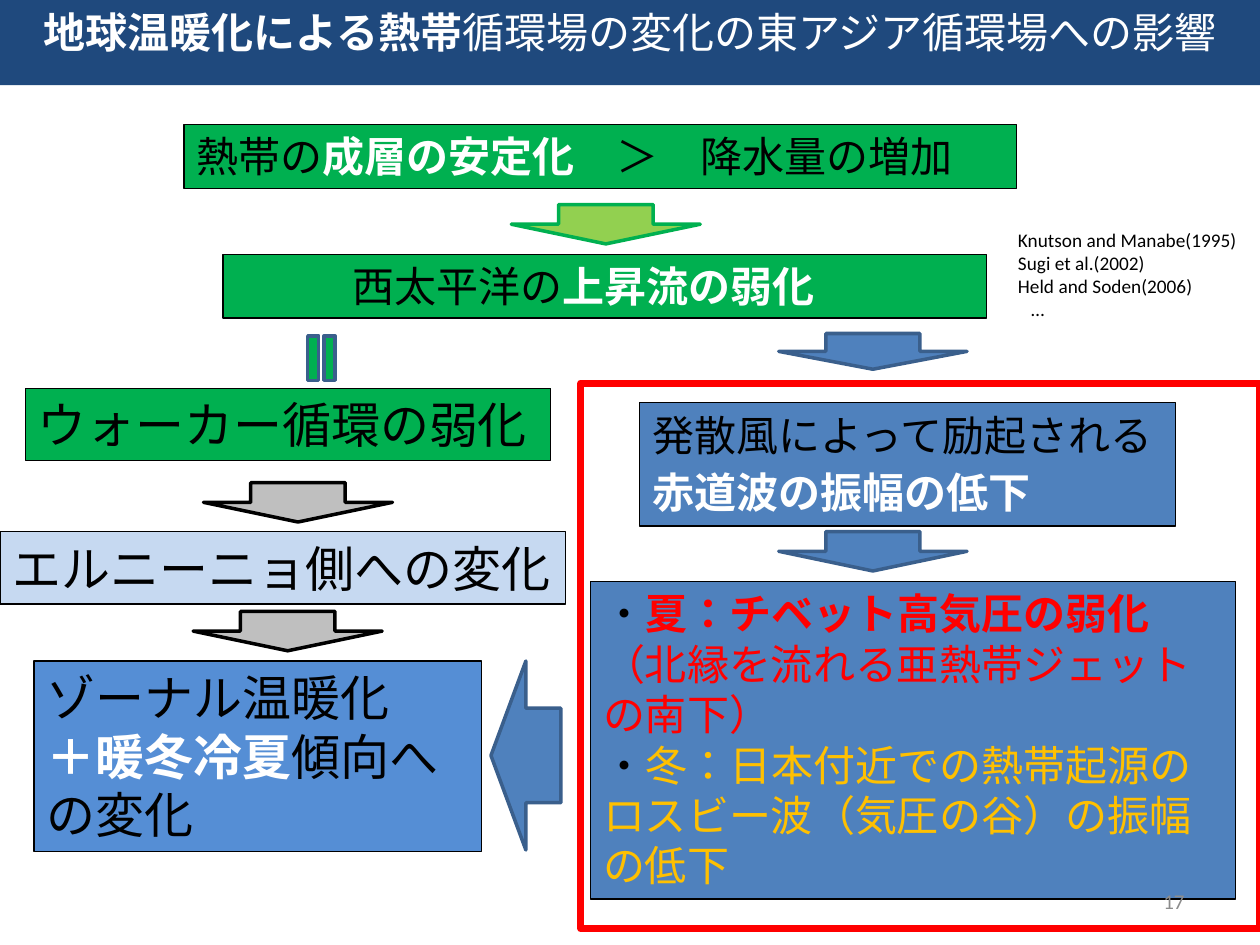
from pptx import Presentation
from pptx.dml.color import RGBColor
from pptx.enum.lang import MSO_LANGUAGE_ID
from pptx.enum.shapes import MSO_SHAPE
from pptx.enum.text import MSO_ANCHOR, PP_ALIGN
from pptx.oxml.ns import qn
from pptx.util import Pt
from lxml import etree

RECT, DOWN, EQUAL = MSO_SHAPE.RECTANGLE, MSO_SHAPE.DOWN_ARROW, MSO_SHAPE.MATH_EQUAL
LEFT, CENTER, RIGHT = PP_ALIGN.LEFT, PP_ALIGN.CENTER, PP_ALIGN.RIGHT
TOP, MIDDLE = MSO_ANCHOR.TOP, MSO_ANCHOR.MIDDLE
JAPANESE = MSO_LANGUAGE_ID.JAPANESE

BLACK = RGBColor(0x00, 0x00, 0x00)
WHITE = RGBColor(0xFF, 0xFF, 0xFF)
RED = RGBColor(0xFF, 0x00, 0x00)
GOLD = RGBColor(0xFF, 0xC0, 0x00)
GREEN = RGBColor(0x00, 0xB0, 0x50)
LIME = RGBColor(0x92, 0xD0, 0x50)
GRAY = RGBColor(0xBF, 0xBF, 0xBF)
PAGE_GRAY = RGBColor(0x8C, 0x8C, 0x8C)
BLUE = RGBColor(0x4F, 0x81, 0xBD)
BLUE_EDGE = RGBColor(0x3A, 0x5F, 0x8C)
SKY = RGBColor(0x55, 0x8E, 0xD5)
PALE = RGBColor(0xC6, 0xD9, 0xF1)
NAVY = RGBColor(0x1F, 0x49, 0x7D)

BODY_FONT, TITLE_FONT = "Calibri", "Noto Sans CJK JP"

# A run is (text, colour, bold[, size[, font]]); a paragraph is a list of runs.
TITLE = [[("地球温暖化による熱帯", WHITE, True, 24, TITLE_FONT),
          ("循環場の変化の東アジア循環場への影響", WHITE, False)]]

# (left, top, width, height), fill, text size, alignment, paragraphs
BOXES = [
    ((105.1, 71.3, 475.9, 36.4), GREEN, 24, LEFT,
     [[("熱帯の", BLACK, False), ("成層の安定化", WHITE, True),
       ("　＞　降水量の増加", BLACK, False)]]),
    ((127.4, 145.4, 436.3, 36.4), GREEN, 24, CENTER,
     [[("西太平洋の", BLACK, False), ("上昇流の弱化　", WHITE, True)]]),
    ((14.4, 221.8, 300.4, 41.2), GREEN, 28, LEFT,
     [[("ウォーカー循環の弱化", BLACK, False)]]),
    ((0, 303.9, 323.3, 41.2), PALE, 28, LEFT,
     [[("エルニーニョ側への変化", BLACK, False)]]),
    ((19.5, 377.8, 255.6, 108.9), SKY, 28, LEFT,
     [[("ゾーナル温暖化", BLACK, False)],
      [("＋暖冬冷夏", WHITE, True), ("傾向への変化", BLACK, False)]]),
    ((365.6, 230.2, 306.2, 70.4), BLUE, 24, LEFT,
     [[("発散風によって励起される", BLACK, False),
       ("赤道波の振幅の低下", WHITE, True), ("　", BLACK, True, 28)]]),
    ((337.5, 332.4, 368.6, 181.4), BLUE, 24, LEFT,
     [[("・", BLACK, False), ("夏：チベット高気圧の弱化", RED, True),
       ("（北縁を流れる亜熱帯ジェットの南下）", RED, False)],
      [("・", BLACK, False),
       ("冬：日本付近での熱帯起源のロスビー波（気圧の谷）の振幅の低下　", GOLD, False)]]),
]

# shape, (left, top, width, height), fill, line, rotation
SYMBOLS = [
    (DOWN, (292.2, 116.9, 108, 22.5), LIME, GREEN, 0),
    (DOWN, (116.3, 275.8, 108, 22.5), GRAY, BLACK, 0),
    (DOWN, (110.4, 349.4, 108, 22.5), GRAY, BLACK, 0),
    (DOWN, (445, 190.6, 107.6, 20.4), BLUE, BLUE_EDGE, 0),
    (DOWN, (445, 303.8, 107.6, 22.5), BLUE, BLUE_EDGE, 0),
    (DOWN, (246.5, 411.8, 108, 39.9), BLUE, BLUE_EDGE, 90),
    (EQUAL, (166.4, 191.3, 34.6, 26.6), GREEN, BLUE_EDGE, 270),
]

FRAME = (331.9, 218.9, 388.1, 311.8)
REFERENCES = ["Knutson and Manabe(1995)", "Sugi et al.(2002)",
              "Held and Soden(2006)", "…"]


def add_shape(s, kind, box, fill=None, line=None, width=0.75, rotation=0):
    sp = s.shapes.add_shape(kind, *map(Pt, box))
    sp.shadow.inherit = False
    sp.rotation = rotation
    if fill is None:
        sp.fill.background()
    else:
        sp.fill.solid()
        sp.fill.fore_color.rgb = fill
    if line is None:
        sp.line.fill.background()
    else:
        sp.line.color.rgb = line
        sp.line.width = Pt(width)
    return sp


def write(sp, paragraphs, size, align=LEFT, anchor=TOP):
    tf = sp.text_frame
    tf.word_wrap = True
    tf.vertical_anchor = anchor
    for i, runs in enumerate(paragraphs):
        p = tf.add_paragraph() if i else tf.paragraphs[0]
        p.alignment = align
        for text, color, bold, *rest in runs:
            run_size, font = (rest + [size, BODY_FONT][len(rest):])
            r = p.add_run()
            r.text = text
            r.font.size = Pt(run_size)
            r.font.bold = bold
            r.font.color.rgb = color
            r.font.name = font
            r.font.language_id = JAPANESE
            ea = etree.SubElement(r.font._element, qn("a:ea"))
            ea.set("typeface", font)
    return tf


def add_text(s, box, *args):
    return write(s.shapes.add_textbox(*map(Pt, box)), *args)


def main():
    prs = Presentation()
    prs.slide_width, prs.slide_height = Pt(720), Pt(540)
    s = prs.slides.add_slide(prs.slide_layouts[6])

    for box, fill, size, align, paragraphs in BOXES:
        write(add_shape(s, RECT, box, fill, BLACK), paragraphs, size, align)
    for kind, box, fill, line, rotation in SYMBOLS:
        add_shape(s, kind, box, fill, line, 2, rotation)
    add_shape(s, RECT, FRAME, line=RED, width=4)
    write(add_shape(s, RECT, (0, 0, 720, 48.7), NAVY), TITLE, 24, CENTER)

    tf = add_text(s, (574.6, 126.7, 145.4, 60.5),
                  [[(name, BLACK, False)] for name in REFERENCES], 11)
    tf.paragraphs[-1]._p.get_or_add_pPr().set("marL", str(Pt(7.5)))
    add_text(s, (516, 500.5, 168, 28.8), [[("17", PAGE_GRAY, False)]], 12, RIGHT, MIDDLE)

    prs.save("out.pptx")


if __name__ == "__main__":
    main()
